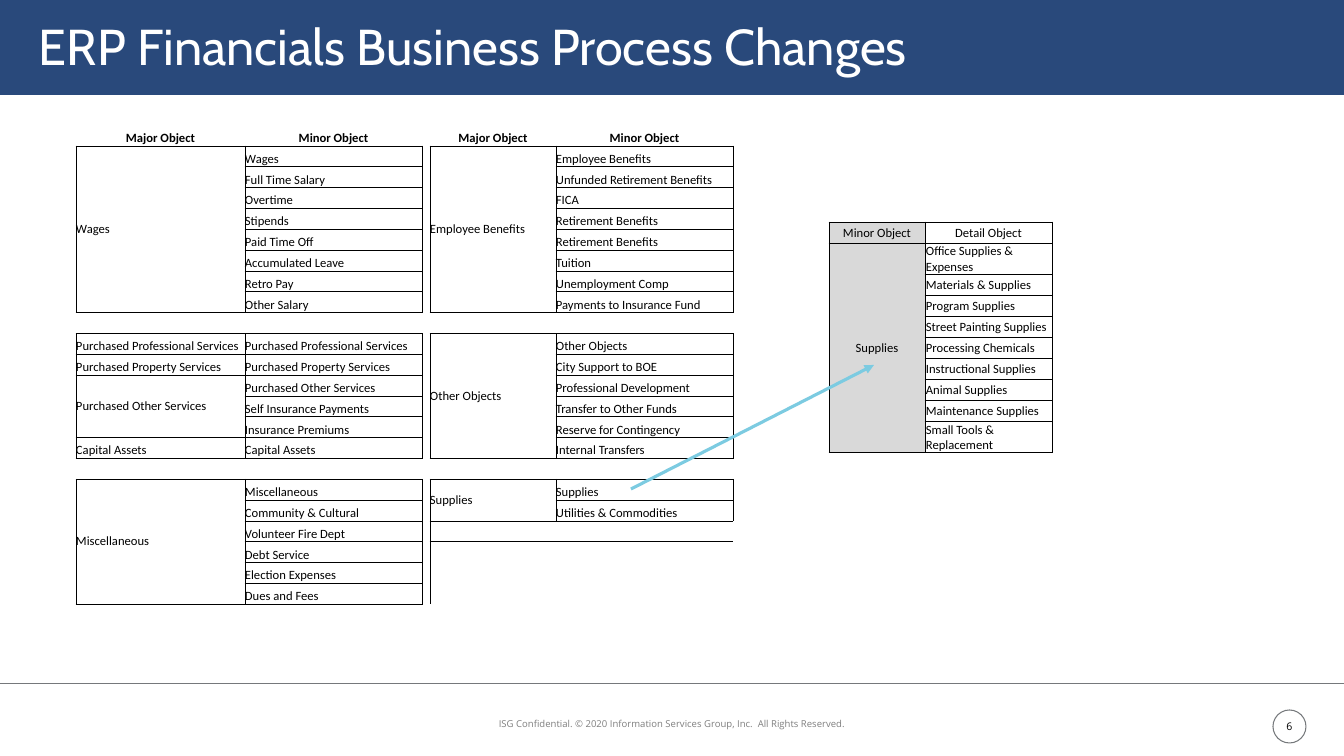
from lxml.etree import SubElement
from pptx import Presentation
from pptx.dml.color import RGBColor
from pptx.enum.shapes import MSO_CONNECTOR, MSO_SHAPE
from pptx.enum.text import MSO_ANCHOR, PP_ALIGN
from pptx.oxml.ns import qn
from pptx.util import Emu, Pt

SCALE = 914400 / 100.8
COLORS = {
    "navy": "29497B", "white": "FFFFFF", "black": "000000", "gray": "75787B",
    "footer": "7F7F7F", "shade": "D9D9D9", "arrow": "7CCBE1",
}
NO_STYLE = "{2D5ABB26-0587-4C30-8999-92F81FD0307C}"
SIDES = {"lnL": (0, -1), "lnR": (0, 1), "lnT": (-1, 0), "lnB": (1, 0)}


def px(*lengths):
    return [Emu(round(length * SCALE)) for length in lengths]


def write(frame, text, font, size, color, align=PP_ALIGN.LEFT, margin=0):
    frame.margin_left = frame.margin_right = frame.margin_top = frame.margin_bottom = margin
    frame.word_wrap = True
    frame.text = text
    paragraph = frame.paragraphs[0]
    paragraph.alignment = align
    for span in paragraph.runs:
        span.font.name = font
        span.font.size = Pt(size)
        span.font.color.rgb = RGBColor.from_string(COLORS[color])


deck = Presentation()
deck.slide_width, deck.slide_height = px(1344, 756)
page = deck.slides.add_slide(deck.slide_layouts[6])

number = page.shapes.add_shape(MSO_SHAPE.OVAL, *px(1273, 710, 33, 33))
number.shadow.inherit = False
number.fill.background()
number.line.color.rgb = RGBColor.from_string(COLORS["gray"])
number.line.width = Pt(0.75)
number.text_frame.vertical_anchor = MSO_ANCHOR.MIDDLE
write(number.text_frame, "6", "Open Sans", 7.5, "black", PP_ALIGN.CENTER)

banner = page.shapes.add_shape(MSO_SHAPE.RECTANGLE, *px(0, 0, 1344, 95))
banner.shadow.inherit = False
banner.fill.solid()
banner.fill.fore_color.rgb = RGBColor.from_string(COLORS["navy"])
banner.line.fill.background()

footer = page.shapes.add_textbox(*px(355, 713, 634, 21))
write(footer.text_frame,
      "ISG Confidential. © 2020 Information Services Group, Inc.  All Rights Reserved.",
      "Open Sans", 6.8, "footer", PP_ALIGN.CENTER, px(5)[0])

title = page.shapes.add_textbox(*px(39, 15, 1220, 72))
write(title.text_frame, "ERP Financials Business Process Changes", "Cabin", 36, "white")

object_blocks = [
    (0, 1, "Wages", ["Wages", "Full Time Salary", "Overtime", "Stipends", "Paid Time Off",
                     "Accumulated Leave", "Retro Pay", "Other Salary"]),
    (0, 10, "Purchased Professional Services", ["Purchased Professional Services"]),
    (0, 11, "Purchased Property Services", ["Purchased Property Services"]),
    (0, 12, "Purchased Other Services", ["Purchased Other Services", "Self Insurance Payments",
                                         "Insurance Premiums"]),
    (0, 15, "Capital Assets", ["Capital Assets"]),
    (0, 17, "Miscellaneous", ["Miscellaneous", "Community & Cultural", "Volunteer Fire Dept",
                              "Debt Service", "Election Expenses", "Dues and Fees"]),
    (3, 1, "Employee Benefits", ["Employee Benefits", "Unfunded Retirement Benefits", "FICA",
                                 "Retirement Benefits", "Retirement Benefits", "Tuition",
                                 "Unemployment Comp", "Payments to Insurance Fund"]),
    (3, 10, "Other Objects", ["Other Objects", "City Support to BOE", "Professional Development",
                              "Transfer to Other Funds", "Reserve for Contingency",
                              "Internal Transfers"]),
    (3, 17, "Supplies", ["Supplies", "Utilities & Commodities"]),
]
detail_blocks = [
    (0, 0, "Minor Object", ["Detail Object"]),
    (0, 1, "Supplies", ["Office Supplies & Expenses", "Materials & Supplies", "Program Supplies",
                        "Street Painting Supplies", "Processing Chemicals",
                        "Instructional Supplies", "Animal Supplies", "Maintenance Supplies",
                        "Small Tools & Replacement"]),
]
object_headings = {(0, column): text for column, text in
                   [(0, "Major Object"), (1, "Minor Object"),
                    (3, "Major Object"), (4, "Minor Object")]}
object_rows = [Emu(px(480)[0] // 23)] * 23
detail_rows = px(21, 31, *[21] * 7, 31)

tables = [
    (76, 125, px(169, 177, 8, 126, 177), object_rows, object_blocks, object_headings, False),
    (829, 222, px(96, 127), detail_rows, detail_blocks, {}, True),
]
for left, top, widths, heights, blocks, headings, is_detail in tables:
    frame = page.shapes.add_table(len(heights), len(widths), *px(left, top),
                                  sum(widths), sum(heights))
    table = frame.table
    table.first_row = table.horz_banding = False
    table._tbl.tblPr.find(qn("a:tableStyleId")).text = NO_STYLE
    for column, width in zip(table.columns, widths):
        column.width = width
    for row, height in zip(table.rows, heights):
        row.height = height

    texts = dict(headings)
    boxed = set()
    tall = set()
    for column, start, major, minors in blocks:
        texts[start, column] = major
        for row, minor in enumerate(minors, start):
            texts[row, column + 1] = minor
            boxed |= {(row, column), (row, column + 1)}
        if len(minors) > 1:
            tall.add((start, column))
            table.cell(start, column).merge(table.cell(start + len(minors) - 1, column))

    for row in range(len(heights)):
        for column in range(len(widths)):
            place = row, column
            cell = table.cell(row, column)
            centred = place in headings or is_detail and (column == 0 or row == 0)
            write(cell.text_frame, texts.get(place, ""), "Calibri", 9, "black",
                  PP_ALIGN.CENTER if centred else PP_ALIGN.LEFT)
            paragraph = cell.text_frame.paragraphs[0]
            for span in paragraph.runs:
                span.font.bold = place in headings
            SubElement(paragraph._p, qn("a:endParaRPr"), sz="900")
            cell.margin_left = cell.margin_right = cell.margin_top = px(int(is_detail))[0]
            cell.margin_bottom = 0
            middle = is_detail or place in tall
            cell.vertical_anchor = MSO_ANCHOR.MIDDLE if middle else MSO_ANCHOR.BOTTOM
            for side, (down, across) in SIDES.items():
                if place in boxed or (row + down, column + across) in boxed:
                    border = SubElement(cell._tc.get_or_add_tcPr(), qn("a:" + side), w="6350")
                    paint = SubElement(border, qn("a:solidFill"))
                    SubElement(paint, qn("a:srgbClr"), val=COLORS["black"])
            if is_detail and column == 0:
                cell.fill.solid()
                cell.fill.fore_color.rgb = RGBColor.from_string(COLORS["shade"])
            else:
                cell.fill.background()

lines = [
    ((0, 684, 1344, 684), "gray", 0.75, False),
    ((631, 489, 874, 365), "arrow", 2.25, True),
]
for ends, color, width, has_head in lines:
    connector = page.shapes.add_connector(MSO_CONNECTOR.STRAIGHT, *px(*ends))
    connector.line.color.rgb = RGBColor.from_string(COLORS[color])
    connector.line.width = Pt(width)
    if has_head:
        SubElement(connector.line._get_or_add_ln(), qn("a:tailEnd"), type="triangle")
    SubElement(connector._element.spPr, qn("a:effectLst"))

deck.save("out.pptx")
